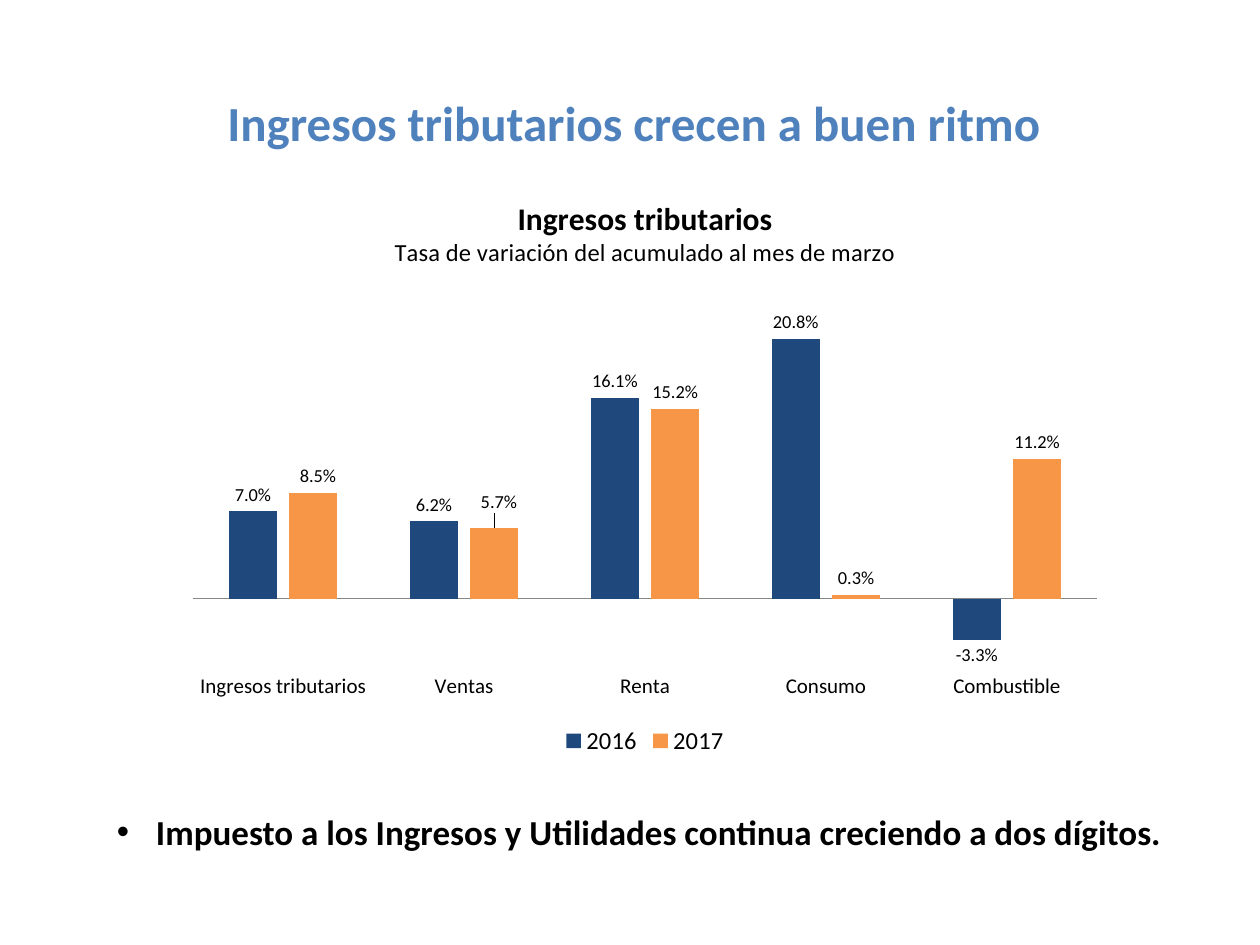
from dataclasses import dataclass

from lxml import etree
from pptx import Presentation
from pptx.chart.data import CategoryChartData
from pptx.dml.color import RGBColor
from pptx.enum.chart import (XL_CHART_TYPE, XL_LABEL_POSITION, XL_LEGEND_POSITION,
                             XL_TICK_LABEL_POSITION, XL_TICK_MARK)
from pptx.enum.text import MSO_ANCHOR, PP_ALIGN
from pptx.oxml import parse_xml
from pptx.oxml.ns import nsdecls, qn
from pptx.util import Inches, Pt

COLUMNS = XL_CHART_TYPE.COLUMN_CLUSTERED
OUTSIDE_END = XL_LABEL_POSITION.OUTSIDE_END
BOTTOM = XL_LEGEND_POSITION.BOTTOM
LOW = XL_TICK_LABEL_POSITION.LOW
NO_TICK = XL_TICK_MARK.NONE
MIDDLE, TOP = MSO_ANCHOR.MIDDLE, MSO_ANCHOR.TOP
CENTER, LEFT = PP_ALIGN.CENTER, PP_ALIGN.LEFT


@dataclass(frozen=True)
class Theme:
    font: str = "Calibri"
    heading: str = "4F81BD"
    ink: str = "000000"
    axis: str = "868686"
    heading_size: float = 28
    bullet_size: float = 20
    chart_title_size: float = 18
    legend_size: float = 14
    category_size: float = 12
    label_size: float = 10.5


@dataclass(frozen=True)
class Box:
    left: float
    top: float
    width: float
    height: float

    def lengths(self):
        return [Inches(v) for v in (self.left, self.top, self.width, self.height)]


@dataclass(frozen=True)
class Series:
    name: str
    color: str
    values: tuple


@dataclass(frozen=True)
class LabelShift:
    """Offset of one data label, in shares of the chart's size."""
    series: int
    point: int
    x: float
    y: float


THEME = Theme()
PERCENT = "0.0%"
HEADING_BOX = Box(0.03, 0.44, 10, 1.06)
CHART_BOX = Box(1.38, 1.39, 7.48, 4.65)
BULLET_BOX = Box(0.83, 6.38, 9.17, 0.77)
PLOT_SHARES = Box(0.02, 0.19, 0.96, 0.64)
CATEGORIES = ("Ingresos tributarios", "Ventas", "Renta", "Consumo", "Combustible")
SERIES = (
    Series("2016", "1F497D", (0.07, 0.062, 0.161, 0.208, -0.033)),
    Series("2017", "F79646", (0.085, 0.057, 0.152, 0.003, 0.112)),
)
LABEL_SHIFTS = (LabelShift(1, 0, 0.005, 0), LabelShift(1, 1, 0.005, -0.016))


def set_font(font, size: float, color: str = THEME.ink, bold: bool = False) -> None:
    for name, value in {"name": THEME.font, "size": Pt(size), "bold": bold}.items():
        setattr(font, name, value)
    font.color.rgb = RGBColor.from_string(color)


def add_text(slide, box: Box, text: str, size: float, color: str,
             anchor=TOP, alignment=LEFT, bullet: bool = False) -> None:
    frame = slide.shapes.add_textbox(*box.lengths()).text_frame
    frame.word_wrap = True
    frame.vertical_anchor = anchor
    paragraph = frame.paragraphs[0]
    paragraph.alignment = alignment
    if bullet:
        properties = paragraph._p.get_or_add_pPr()
        indent = Inches(0.31)
        properties.set("marL", str(indent))
        properties.set("indent", str(-indent))
        etree.SubElement(properties, qn("a:buFont"), typeface="Arial")
        etree.SubElement(properties, qn("a:buChar"), char="•")
    run = paragraph.add_run()
    run.text = text
    set_font(run.font, size, color, bold=True)


def manual_layout(**values):
    """Chart layout element whose children follow the given order."""
    layout = parse_xml(f"<c:layout {nsdecls('c')}><c:manualLayout/></c:layout>")
    for name, value in values.items():
        etree.SubElement(layout[0], qn(f"c:{name}"), val=str(value))
    return layout


def place_plot(chart, shares: Box) -> None:
    plot_area = chart.element.xpath("c:chart/c:plotArea")[0]
    for old in plot_area.xpath("c:layout"):
        plot_area.remove(old)
    plot_area.insert(0, manual_layout(
        layoutTarget="inner", xMode="edge", yMode="edge",
        x=shares.left, y=shares.top, w=shares.width, h=shares.height))


def shift_label(chart, shift: LabelShift) -> None:
    label = chart.plots[0].series[shift.series].points[shift.point].data_label
    set_font(label.font, THEME.label_size)
    label.position = OUTSIDE_END
    index = chart.element.xpath(
        f"//c:ser[c:idx/@val='{shift.series}']//c:dLbl/c:idx[@val='{shift.point}']")[0]
    index.addnext(manual_layout(x=shift.x, y=shift.y))


def title_chart(chart) -> None:
    frame = chart.chart_title.text_frame
    lines = (("Ingresos tributarios", THEME.chart_title_size, True),
             ("Tasa de variación del acumulado al mes de marzo", THEME.legend_size, False))
    for number, (text, size, bold) in enumerate(lines):
        paragraph = frame.add_paragraph() if number else frame.paragraphs[0]
        run = paragraph.add_run()
        run.text = text
        set_font(run.font, size, bold=bold)
    chart.chart_title.include_in_layout = False


def format_axes(chart) -> None:
    category_axis, value_axis = chart.category_axis, chart.value_axis
    for name, value in {"tick_label_position": LOW, "major_tick_mark": NO_TICK,
                        "minor_tick_mark": NO_TICK}.items():
        setattr(category_axis, name, value)
    set_font(category_axis.tick_labels.font, THEME.category_size)
    category_axis.format.line.color.rgb = RGBColor.from_string(THEME.axis)
    for name, value in {"visible": False, "has_major_gridlines": False,
                        "minimum_scale": -0.05, "maximum_scale": 0.25}.items():
        setattr(value_axis, name, value)


def add_growth_chart(slide) -> None:
    data = CategoryChartData(number_format=PERCENT)
    data.categories = CATEGORIES
    for item in SERIES:
        data.add_series(item.name, item.values)
    chart = slide.shapes.add_chart(COLUMNS, *CHART_BOX.lengths(), data).chart
    set_font(chart.font, 10)
    title_chart(chart)
    format_axes(chart)
    chart.has_legend = True
    for name, value in {"position": BOTTOM, "include_in_layout": False}.items():
        setattr(chart.legend, name, value)
    set_font(chart.legend.font, THEME.legend_size)

    plot = chart.plots[0]
    for name, value in {"gap_width": 150, "overlap": -25,
                        "vary_by_categories": False}.items():
        setattr(plot, name, value)
    for series, item in zip(plot.series, SERIES):
        series.invert_if_negative = False
        series.format.fill.solid()
        series.format.fill.fore_color.rgb = RGBColor.from_string(item.color)
        labels = series.data_labels
        for name, value in {"show_value": True, "number_format": PERCENT,
                            "number_format_is_linked": False,
                            "position": OUTSIDE_END}.items():
            setattr(labels, name, value)
        set_font(labels.font, THEME.label_size)
    for shift in LABEL_SHIFTS:
        shift_label(chart, shift)
    place_plot(chart, PLOT_SHARES)


def main() -> None:
    presentation = Presentation()
    presentation.slide_width, presentation.slide_height = Inches(10), Inches(7.5)
    slide = presentation.slides.add_slide(presentation.slide_layouts[6])
    add_text(slide, HEADING_BOX, "Ingresos tributarios crecen a buen ritmo",
             THEME.heading_size, THEME.heading, MIDDLE, CENTER)
    add_text(slide, BULLET_BOX,
             "Impuesto a los Ingresos y Utilidades continua creciendo a dos dígitos.",
             THEME.bullet_size, THEME.ink, bullet=True)
    add_growth_chart(slide)
    presentation.save("out.pptx")


if __name__ == "__main__":
    main()
